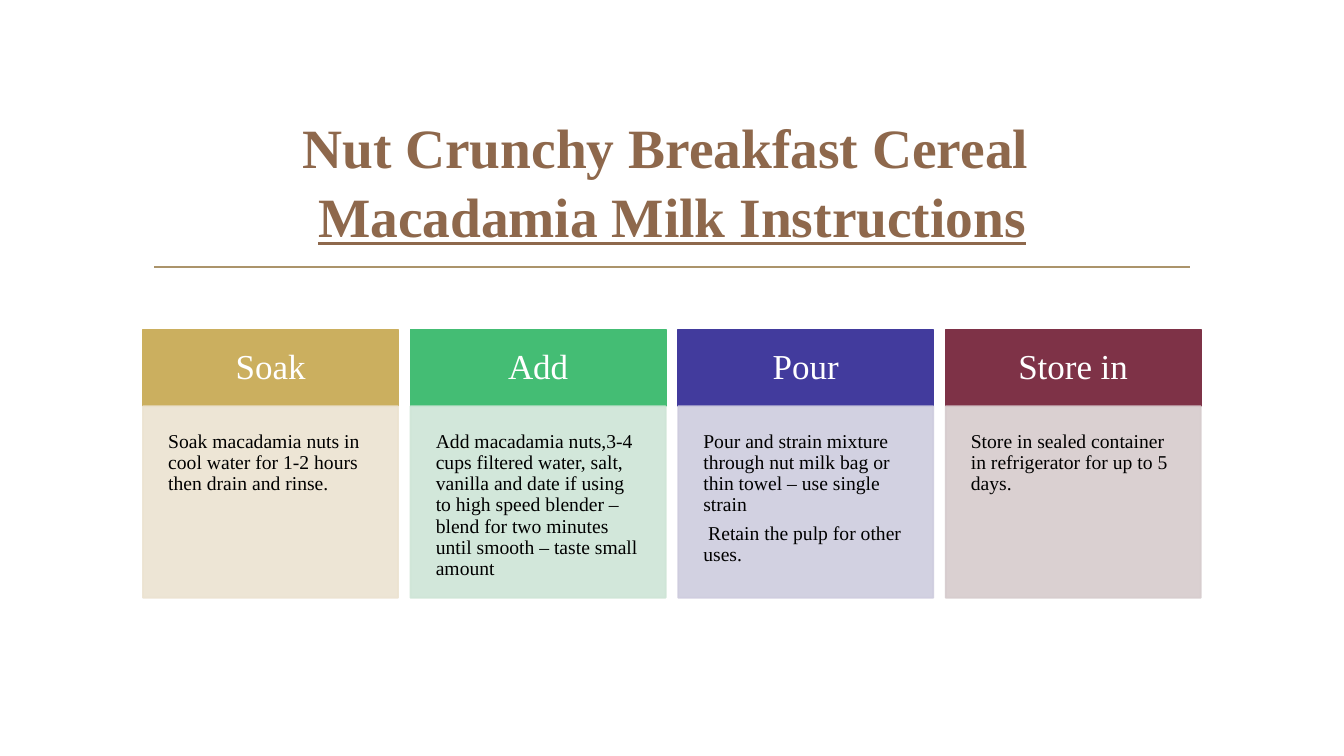
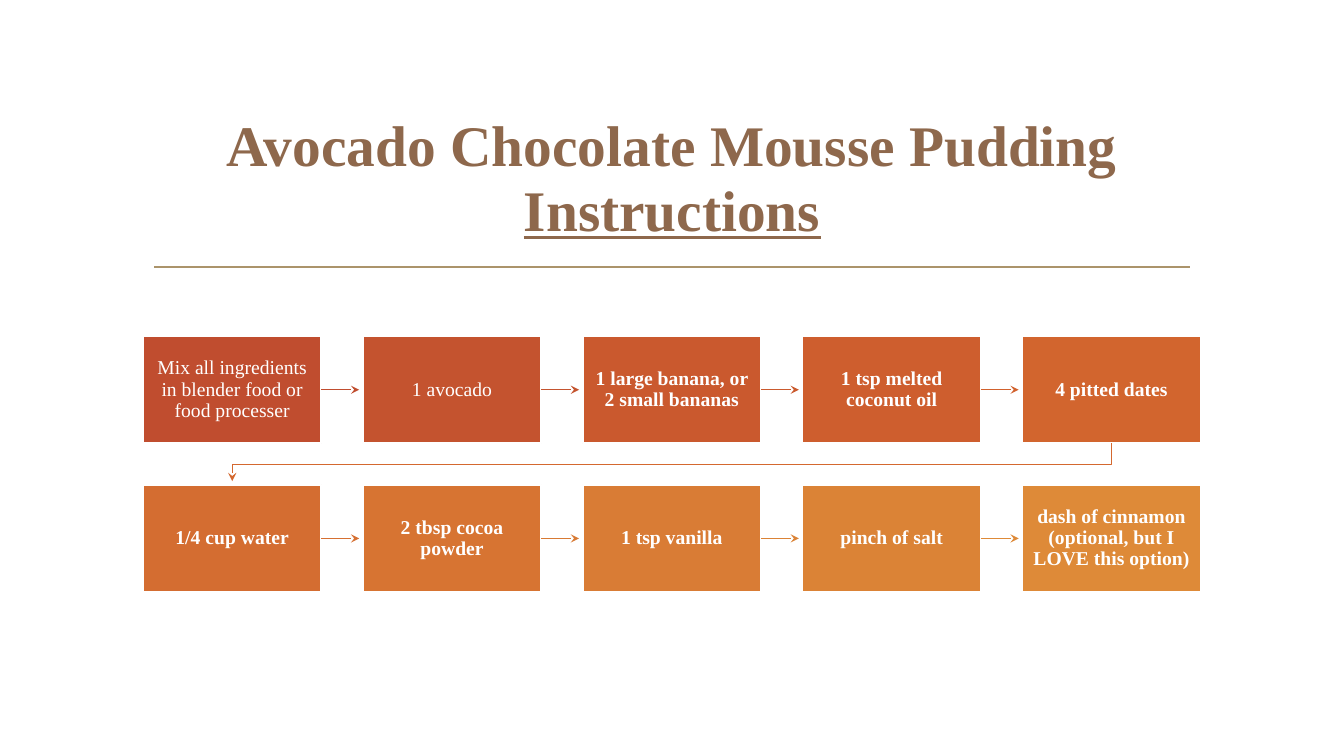
from dataclasses import dataclass

from lxml import etree
from pptx import Presentation
from pptx.dml.color import RGBColor
from pptx.enum.shapes import MSO_CONNECTOR, MSO_SHAPE
from pptx.enum.text import MSO_ANCHOR, PP_ALIGN
from pptx.oxml.ns import qn
from pptx.util import Pt

RECTANGLE = MSO_SHAPE.RECTANGLE
STRAIGHT = MSO_CONNECTOR.STRAIGHT
TOP, MIDDLE = MSO_ANCHOR.TOP, MSO_ANCHOR.MIDDLE
LEFT, CENTER = PP_ALIGN.LEFT, PP_ALIGN.CENTER
RIGHT_SIDE = 3


@dataclass(frozen=True)
class Theme:
    font: str = "Times New Roman"
    title: str = "8E684C"
    rule: str = "AB946B"
    light: str = "FFFFFF"
    dark: str = "000000"
    turn: str = "D4682F"
    heading_size: float = 25
    body_size: float = 14
    border: float = 1.25
    arrow: float = 0.75
    spacing: float = 0.9


THEME = Theme()
SLIDE_WIDTH, SLIDE_HEIGHT = 960, 540
CONTENT_LEFT, CONTENT_WIDTH = 102.2, 755.5
CARD_WIDTH, CARD_TOP, HEADING_HEIGHT, BODY_HEIGHT = 182.2, 235.4, 54.8, 136.8
STEP_WIDTH, STEP_HEIGHT, STEP_TOP, ROW_PITCH = 127.4, 76.4, 240.2, 106.2
STEPS_PER_ROW = 5
ARROW_LENGTH = 27

CARDS = [
    ("Soak", "CBAF5F", "ECE3D1",
     ["Soak macadamia nuts in cool water for 1-2 hours then drain and rinse."]),
    ("Add", "44BD74", "CEE5D6",
     ["Add macadamia nuts,3-4 cups filtered water, salt, vanilla and date if "
      "using to high speed blender – blend for two minutes until smooth – "
      "taste small amount"]),
    ("Pour", "423B9D", "CECCDE",
     ["Pour and strain mixture through nut milk bag or thin towel – use "
      "single strain",
      " Retain the pulp for other uses."]),
    ("Store in", "7E3247", "D6CBCD",
     ["Store in sealed container in refrigerator for up to 5 days."]),
]

STEPS = [
    ("Mix all ingredients in blender food or food processer", False,
     "C04D2F", "C04D2F"),
    ("1 avocado", False, "C4532F", "C4542F"),
    ("1 large banana, or 2 small bananas", True, "CA592E", "CA5A2E"),
    ("1 tsp melted coconut oil", True, "CE5E2E", "D1612D"),
    ("4 pitted dates", True, "D2652E", THEME.turn),
    ("1/4 cup water", True, "D46D31", "D67032"),
    ("2 tbsp cocoa powder", True, "D77432", "D87A34"),
    ("1 tsp vanilla", True, "D97C35", "DB8336"),
    ("pinch of salt", True, "DB8336", "DE8A38"),
    ("dash of cinnamon (optional, but I LOVE this option)", True,
     "DE8A38", None),
]


def column_lefts(count, width):
    pitch = (CONTENT_WIDTH - width) / (count - 1)
    return [CONTENT_LEFT + pitch * column for column in range(count)]


def add_run(paragraph, text, size, color, bold=False, underline=None):
    run = paragraph.add_run()
    run.text = text
    run.font.name = THEME.font
    run.font.size = Pt(size)
    run.font.bold = bold
    run.font.underline = underline
    run.font.color.rgb = RGBColor.from_string(color)


def set_frame(frame, anchor, inset_x, inset_y):
    frame.word_wrap = True
    frame.vertical_anchor = anchor
    frame.margin_left = frame.margin_right = Pt(inset_x)
    frame.margin_top = frame.margin_bottom = Pt(inset_y)


def style_stroke(stroke, color, weight, arrowhead=False):
    stroke.line.color.rgb = RGBColor.from_string(color)
    stroke.line.width = Pt(weight)
    properties = stroke.element.spPr
    if arrowhead:
        etree.SubElement(properties.find(qn("a:ln")), qn("a:tailEnd"),
                         type="stealth")
    etree.SubElement(properties, qn("a:effectLst"))


def add_line(slide, start, end, color, weight, arrowhead=False):
    connector = slide.shapes.add_connector(
        STRAIGHT, *(Pt(value) for value in (*start, *end)))
    style_stroke(connector, color, weight, arrowhead)
    return connector


def add_panel(slide, left, top, width, height, fill, border):
    panel = slide.shapes.add_shape(
        RECTANGLE, Pt(left), Pt(top), Pt(width), Pt(height))
    panel.fill.solid()
    panel.fill.fore_color.rgb = RGBColor.from_string(fill)
    style_stroke(panel, border, THEME.border)
    return panel


def make_translucent(panel, percent):
    for color in panel.element.spPr.iter(qn("a:srgbClr")):
        etree.SubElement(color, qn("a:alpha"), val=str(percent * 1000))


def write_panel(panel, texts, size, color, inset, anchor=MIDDLE,
                alignment=CENTER, bold=False):
    frame = panel.text_frame
    set_frame(frame, anchor, inset, inset)
    for index, text in enumerate(texts):
        paragraph = frame.add_paragraph() if index else frame.paragraphs[0]
        paragraph.alignment = alignment
        paragraph.line_spacing = THEME.spacing
        if index:
            paragraph.space_before = Pt(4.9)
        add_run(paragraph, text, size, color, bold)


def add_recipe_slide(deck, name, subject, size, spacing, own_line=False):
    slide = deck.slides.add_slide(deck.slide_layouts[6])
    add_line(slide, (110.2, 190.8), (850.3, 190.8), THEME.rule, THEME.border)
    title = slide.shapes.add_textbox(Pt(102.2), Pt(77), Pt(756), Pt(103))
    set_frame(title.text_frame, MIDDLE, 7.2, 3.6)
    paragraph = title.text_frame.paragraphs[0]
    paragraph.alignment = CENTER
    paragraph.line_spacing = spacing
    add_run(paragraph, name, size, THEME.title, bold=True)
    if own_line:
        paragraph.add_line_break()
    add_run(paragraph, subject, size, THEME.title, bold=True, underline=True)
    return slide


def add_card(slide, left, heading, accent, tint, texts):
    header = add_panel(slide, left, CARD_TOP, CARD_WIDTH, HEADING_HEIGHT,
                       accent, accent)
    write_panel(header, [heading], THEME.heading_size, THEME.light, 14.4)
    body = add_panel(slide, left, CARD_TOP + HEADING_HEIGHT, CARD_WIDTH,
                     BODY_HEIGHT, tint, tint)
    make_translucent(body, 90)
    write_panel(body, texts, THEME.body_size, THEME.dark, 18, TOP, LEFT)


def add_step(slide, left, top, text, bold, fill):
    step = add_panel(slide, left, top, STEP_WIDTH, STEP_HEIGHT, fill,
                     THEME.light)
    write_panel(step, [text], THEME.body_size, THEME.light, 6.5, bold=bold)
    return step


def add_step_arrow(slide, step, left, top, color):
    start = left + STEP_WIDTH
    middle = top + STEP_HEIGHT / 2
    arrow = add_line(slide, (start, middle), (start + ARROW_LENGTH, middle),
                     color, THEME.arrow, arrowhead=True)
    arrow.begin_connect(step, RIGHT_SIDE)


def add_row_turn(slide, first_left, last_left):
    start_x = last_left + STEP_WIDTH / 2
    end_x = first_left + STEP_WIDTH / 2
    start_y = STEP_TOP + STEP_HEIGHT
    turn_y = STEP_TOP + (STEP_HEIGHT + ROW_PITCH) / 2
    builder = slide.shapes.build_freeform(Pt(start_x), Pt(start_y))
    corners = [(start_x, turn_y), (end_x, turn_y),
               (end_x, start_y + ARROW_LENGTH)]
    builder.add_line_segments([(Pt(x), Pt(y)) for x, y in corners],
                              close=False)
    turn = builder.convert_to_shape()
    turn.fill.background()
    style_stroke(turn, THEME.turn, THEME.arrow, arrowhead=True)


def add_milk_slide(deck):
    slide = add_recipe_slide(deck, "Nut Crunchy Breakfast Cereal ",
                             "Macadamia Milk Instructions", 39.6, 1.03,
                             own_line=True)
    for left, card in zip(column_lefts(len(CARDS), CARD_WIDTH), CARDS):
        add_card(slide, left, *card)


def add_pudding_slide(deck):
    slide = add_recipe_slide(deck, "Avocado Chocolate Mousse Pudding ",
                             "Instructions", 41, 0.94)
    lefts = column_lefts(STEPS_PER_ROW, STEP_WIDTH)
    for index, (text, bold, fill, arrow_color) in enumerate(STEPS):
        row, column = divmod(index, STEPS_PER_ROW)
        left, top = lefts[column], STEP_TOP + row * ROW_PITCH
        step = add_step(slide, left, top, text, bold, fill)
        if column < STEPS_PER_ROW - 1:
            add_step_arrow(slide, step, left, top, arrow_color)
    add_row_turn(slide, lefts[0], lefts[-1])


def main():
    deck = Presentation()
    deck.slide_width, deck.slide_height = Pt(SLIDE_WIDTH), Pt(SLIDE_HEIGHT)
    add_milk_slide(deck)
    add_pudding_slide(deck)
    deck.save("out.pptx")


if __name__ == "__main__":
    main()
